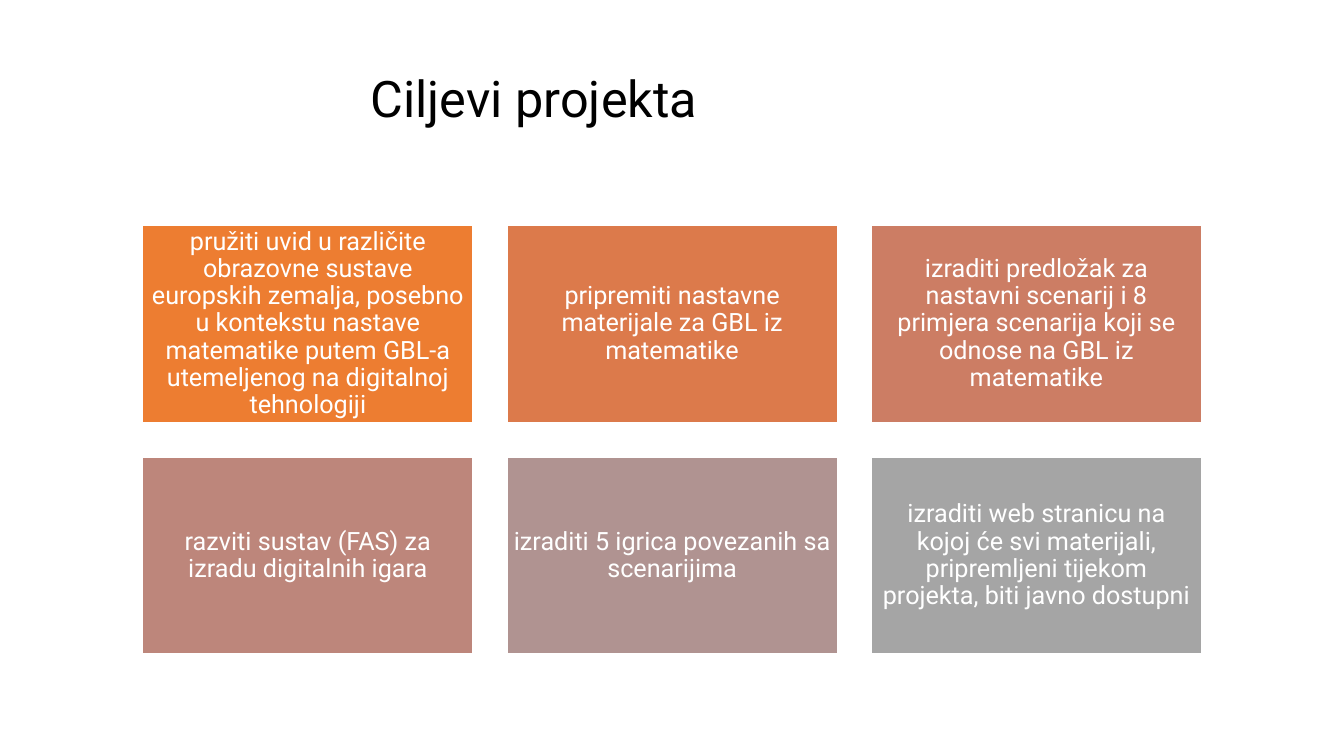
from pptx import Presentation
from pptx.dml.color import RGBColor
from pptx.enum.shapes import MSO_SHAPE
from pptx.enum.text import MSO_ANCHOR, PP_ALIGN
from pptx.util import Cm, Pt

RECT = MSO_SHAPE.RECTANGLE
MIDDLE, TOP = MSO_ANCHOR.MIDDLE, MSO_ANCHOR.TOP
CENTER, LEFT = PP_ALIGN.CENTER, PP_ALIGN.LEFT

BLACK = RGBColor(0x00, 0x00, 0x00)
WHITE = RGBColor(0xFF, 0xFF, 0xFF)
ORANGE = RGBColor(0xED, 0x7D, 0x31)
RUST = RGBColor(0xDC, 0x7A, 0x4B)
CORAL = RGBColor(0xCC, 0x7D, 0x64)
CLAY = RGBColor(0xBD, 0x86, 0x7B)
MAUVE = RGBColor(0xB0, 0x93, 0x91)
GRAY = RGBColor(0xA5, 0xA5, 0xA5)

# Content
TITLE = "Ciljevi projekta"
GOALS = [
    ("pružiti uvid u različite obrazovne sustave europskih zemalja, "
     "posebno u kontekstu nastave matematike putem GBL-a utemeljenog "
     "na digitalnoj tehnologiji", ORANGE),
    ("pripremiti nastavne materijale za GBL iz matematike", RUST),
    ("izraditi predložak za nastavni scenarij i 8 primjera scenarija "
     "koji se odnose na GBL iz matematike", CORAL),
    ("razviti sustav (FAS) za izradu digitalnih igara", CLAY),
    ("izraditi 5 igrica povezanih sa scenarijima", MAUVE),
    ("izraditi web stranicu na kojoj će svi materijali, pripremljeni "
     "tijekom projekta, biti javno dostupni", GRAY),
]

# Grid in centimetres
COLS = 3
LEFT_X, TOP_Y = 3.58, 5.66
CARD_W, CARD_H = 8.36, 5.0
STEP_X, STEP_Y = 9.18, 5.84


def write(shape, text, size, color, align, anchor):
    frame = shape.text_frame
    frame.text = text
    frame.word_wrap = True
    frame.vertical_anchor = anchor
    para = frame.paragraphs[0]
    para.alignment = align
    para.line_spacing = 0.9
    font = para.runs[0].font
    font.name = "Roboto"
    font.size = Pt(size)
    font.color.rgb = color
    return frame


def add_card(slide, index, text, fill):
    row, col = divmod(index, COLS)
    card = slide.shapes.add_shape(
        RECT, Cm(LEFT_X + col * STEP_X), Cm(TOP_Y + row * STEP_Y),
        Cm(CARD_W), Cm(CARD_H))
    card.shadow.inherit = False
    card.fill.solid()
    card.fill.fore_color.rgb = fill
    card.line.color.rgb = WHITE
    card.line.width = Pt(2)
    frame = write(card, text, 18, WHITE, CENTER, MIDDLE)
    frame.margin_left = frame.margin_right = Cm(0.18)
    frame.margin_top = frame.margin_bottom = Cm(0.18)


def main():
    deck = Presentation()
    deck.slide_width, deck.slide_height = Cm(33.87), Cm(19.05)
    slide = deck.slides.add_slide(deck.slide_layouts[6])

    # Title
    title = slide.shapes.add_textbox(Cm(9.09), Cm(1.73), Cm(24), Cm(3.05))
    write(title, TITLE, 36, BLACK, LEFT, TOP)

    # Goal cards
    for index, (text, fill) in enumerate(GOALS):
        add_card(slide, index, text, fill)

    deck.save("out.pptx")


if __name__ == "__main__":
    main()
